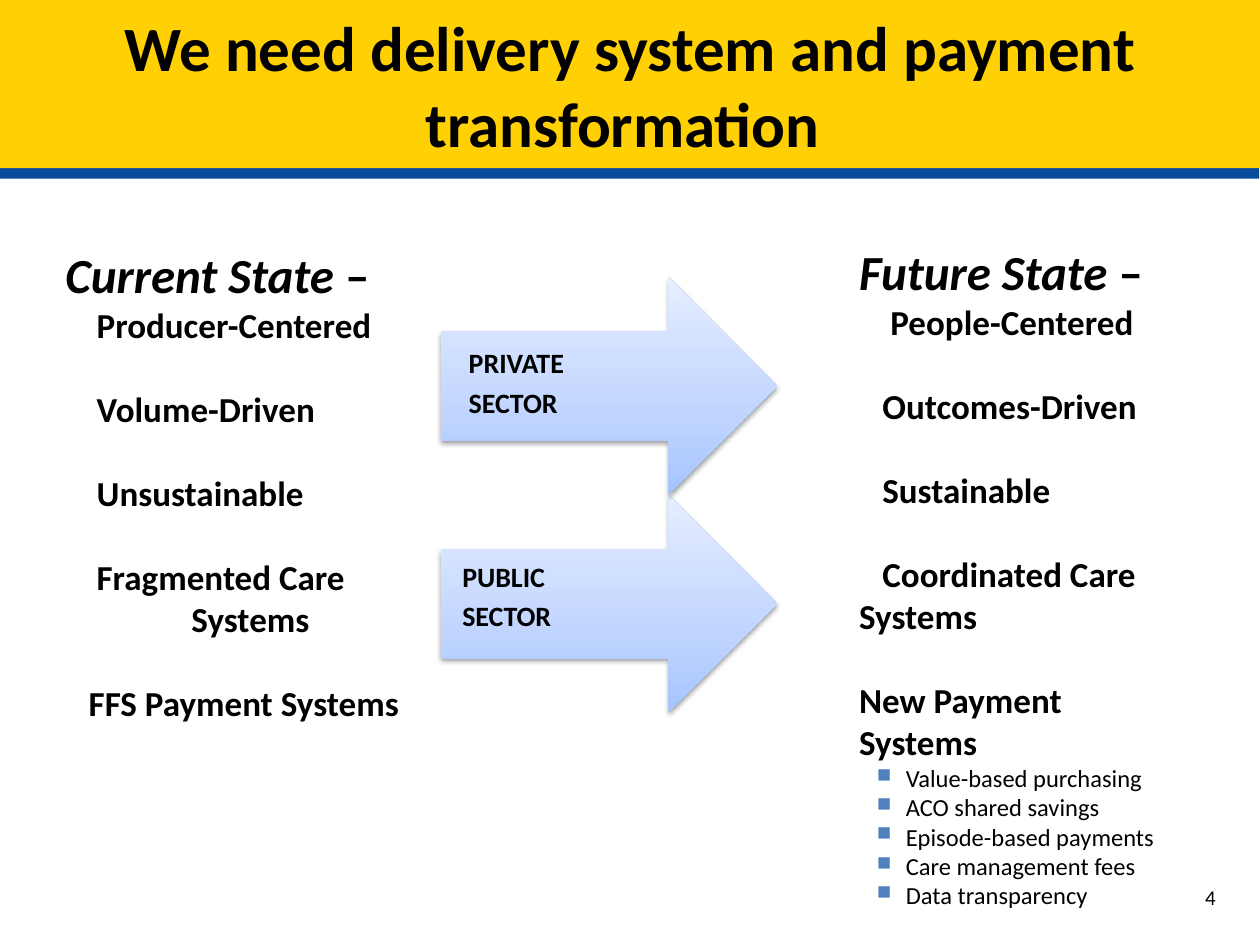
import pptx
import pptx.util
import pptx.dml.color
import pptx.enum.shapes
import pptx.enum.text
import pptx.oxml.ns
import lxml.etree

Cm, Pt = pptx.util.Cm, pptx.util.Pt
MSO = pptx.enum.shapes.MSO_SHAPE
ANCHOR = pptx.enum.text.MSO_ANCHOR
ALIGN = pptx.enum.text.PP_ALIGN
qn = pptx.oxml.ns.qn

# Content: items are (text, left margin, first-line indent, space before in points)
TITLE = "We need delivery system and payment transformation "
PAGE = "4"
GAP = 24
CURRENT = ("Current State ", [
    ("Producer-Centered", 0, 0.63, 0),
    ("Volume-Driven", 0, 0.63, GAP),
    ("Unsustainable", 0, 0.63, GAP),
    ("Fragmented Care Systems", 2.54, -1.91, GAP),
    ("FFS Payment Systems", 0, 0.47, GAP),
], [])
FUTURE = ("Future State ", [
    ("People-Centered", 0, 0.63, 0),
    ("Outcomes-Driven", 0, 0.47, GAP),
    ("Sustainable", 0, 0.47, GAP),
    ("Coordinated Care Systems", 0, 0.47, GAP),
    ("New Payment Systems", 0, 0, GAP),
], ["Value-based purchasing", "ACO shared savings", "Episode-based payments",
    "Care management fees", "Data transparency"])
COLUMNS = [  # left, top, width, height, content
    (1.07, 4.8, 7.82, 12.57, CURRENT),
    (17.07, 4.75, 7.0, 13.9, FUTURE),
]
ARROWS = [  # words, label left, label top
    (["PUBLIC", "SECTOR"], 9.32, 10.95),
    (["PRIVATE", "SECTOR"], 9.45, 6.65),
]
ARROW_LEFT, ARROW_TOP, ARROW_W, ARROW_H = 8.89, 5.59, 6.78, 4.39

THEME = {
    "font": "Calibri", "text": "000000", "band": "FFD004", "rule": "084A9C",
    "bullet": "4F81BD",
    "arrow": [(0, "A4C4FF"), (35, "BFD4FF"), (100, "E6EEFF")],
    "title": 36, "heading": 28, "item": 20, "label": 16, "sub": 14, "page": 12,
}

prs = pptx.Presentation()
prs.slide_width, prs.slide_height = Cm(25.4), Cm(19.05)
s = prs.slides.add_slide(prs.slide_layouts[6])


def rgb(name):
    return pptx.dml.color.RGBColor.from_string(name)


def add_color(parent, value):
    return lxml.etree.SubElement(parent, qn("a:srgbClr"), val=value)


def add_run(p, text, size, bold=True, italic=False):
    r = p.add_run()
    r.text = text
    f = r.font
    f.name, f.size, f.bold, f.italic = THEME["font"], Pt(THEME[size]), bold, italic
    f.color.rgb = rgb(THEME["text"])


def add_text(left, top, width, height, anchor=ANCHOR.TOP):
    tf = s.shapes.add_textbox(Cm(left), Cm(top), Cm(width), Cm(height)).text_frame
    tf.word_wrap = True
    tf.vertical_anchor = anchor
    return tf


def next_paragraph(tf):
    first = tf.paragraphs[0]
    return tf.add_paragraph() if first.runs else first


def set_indent(p, margin, first):
    pPr = p._p.get_or_add_pPr()
    pPr.set("marL", str(int(Cm(margin))))
    pPr.set("indent", str(int(Cm(first))))
    return pPr


def add_shape(kind, left, top, width, height):
    sp = s.shapes.add_shape(kind, Cm(left), Cm(top), Cm(width), Cm(height))
    sp.line.fill.background()
    return sp


def set_shadow(sp, color, alpha, blur, dist, angle):
    sp.shadow.inherit = False
    effects = sp._element.spPr.find(qn("a:effectLst"))
    shadow = lxml.etree.SubElement(
        effects, qn("a:outerShdw"), blurRad=str(int(Pt(blur))),
        dist=str(int(Pt(dist))), dir=str(angle * 60000), rotWithShape="0")
    lxml.etree.SubElement(add_color(shadow, color), qn("a:alpha"), val=str(alpha * 1000))


def set_gradient(sp, stops):
    sp.fill.gradient()
    sp.fill.gradient_angle = 90
    gs_list = sp._element.spPr.find(".//" + qn("a:gsLst"))
    for old in list(gs_list):
        gs_list.remove(old)
    for pos, color in stops:
        add_color(lxml.etree.SubElement(gs_list, qn("a:gs"), pos=str(pos * 1000)), color)


# Title band with the blue rule beneath it
band = add_shape(MSO.RECTANGLE, 0, 0, 25.4, 3.39)
band.fill.solid()
band.fill.fore_color.rgb = rgb(THEME["band"])
set_shadow(band, THEME["rule"], 100, 0, 6, 94)
tf = band.text_frame
tf.word_wrap = True
tf.vertical_anchor = ANCHOR.MIDDLE
tf.paragraphs[0].alignment = ALIGN.CENTER
add_run(tf.paragraphs[0], TITLE, "title")

# Sector arrows, stacked from the bottom up
for i, (words, left, top) in enumerate(ARROWS):
    row = len(ARROWS) - 1 - i
    arrow = add_shape(MSO.RIGHT_ARROW, ARROW_LEFT, ARROW_TOP + row * ARROW_H, ARROW_W, ARROW_H)
    set_gradient(arrow, THEME["arrow"])
    set_shadow(arrow, "000000", 38, 3.1, 1.6, 90)
    tf = add_text(left, top, 5.54, 2.21, ANCHOR.MIDDLE)
    tf.margin_left = tf.margin_right = 0
    tf.margin_top = tf.margin_bottom = Cm(0.46)
    for word in words:
        p = next_paragraph(tf)
        p.line_spacing = 0.9
        p.space_after = Pt(5.5)
        add_run(p, word, "label")

# Current and future state columns
for left, top, width, height, (heading, items, bullets) in COLUMNS:
    tf = add_text(left, top, width, height)
    p = next_paragraph(tf)
    add_run(p, heading, "heading", italic=True)
    add_run(p, "–", "heading")
    for text, margin, first, before in items:
        p = next_paragraph(tf)
        p.space_before = Pt(before)
        set_indent(p, margin, first)
        add_run(p, text, "item")
    for text in bullets:
        p = next_paragraph(tf)
        pPr = set_indent(p, 0.94, -0.58)
        add_color(lxml.etree.SubElement(pPr, qn("a:buClr")), THEME["bullet"])
        lxml.etree.SubElement(pPr, qn("a:buSzPct"), val="80000")
        lxml.etree.SubElement(pPr, qn("a:buChar"), char="■")
        add_run(p, text, "sub", bold=False)

# Page number
p = add_text(22.02, 17.58, 2.74, 1.02, ANCHOR.MIDDLE).paragraphs[0]
p.alignment = ALIGN.RIGHT
add_run(p, PAGE, "page", bold=False)

prs.save("out.pptx")
